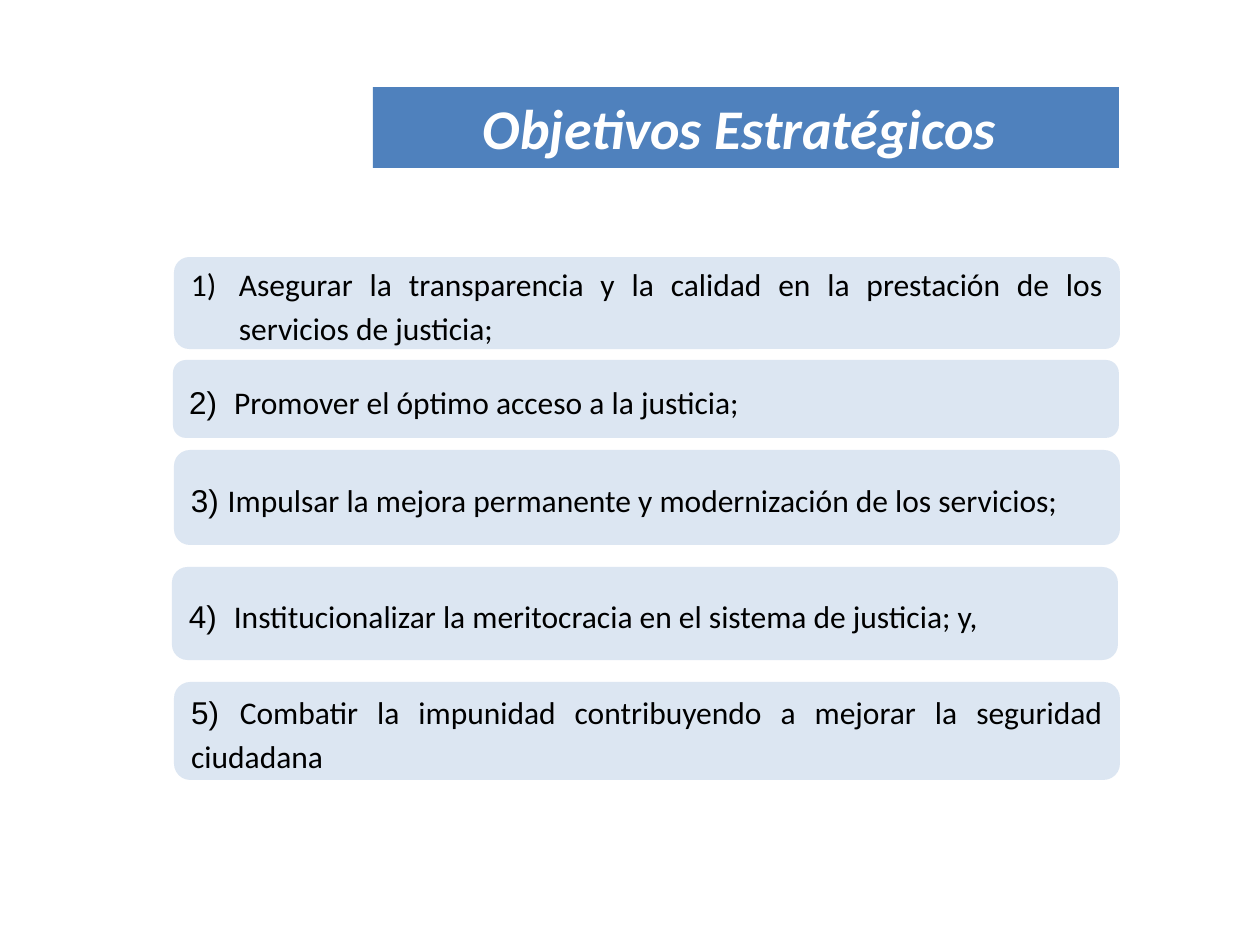
from dataclasses import dataclass

from lxml.etree import SubElement
from pptx import Presentation
from pptx.dml.color import RGBColor
from pptx.enum.shapes import MSO_SHAPE
from pptx.enum.text import MSO_ANCHOR, PP_ALIGN
from pptx.oxml.ns import qn
from pptx.shapes.autoshape import Shape
from pptx.slide import Slide
from pptx.text.text import _Paragraph, _Run
from pptx.util import Emu, Pt

PX_PER_INCH = 126
COLORS = {"banner": "4F81BD", "card": "DCE6F2", "light": "FFFFFF", "dark": "000000"}
CARD_WIDTH = 946
NUMBER_INDENT = 48
TEXT_TAB = 45


@dataclass(frozen=True)
class Objective:
    left: int
    top: int
    height: int
    number: str
    wording: str
    bulleted: bool = False
    tabbed: bool = False


OBJECTIVES = [
    Objective(174, 257, 92, "1)", "Asegurar la transparencia y la calidad en la "
              "prestación de los servicios de justicia;", bulleted=True),
    Objective(173, 360, 78, "2)", "Promover el óptimo acceso a la justicia;", tabbed=True),
    Objective(174, 450, 95, "3)", "Impulsar la mejora permanente y modernización "
              "de los servicios;"),
    Objective(172, 567, 93, "4)", "Institucionalizar la meritocracia en el sistema "
              "de justicia; y,", tabbed=True),
    Objective(174, 682, 98, "5)", "Combatir la impunidad contribuyendo a mejorar "
              "la seguridad ciudadana"),
]


def px(length: int) -> Emu:
    return Emu(round(length * 914400 / PX_PER_INCH))


def add_panel(slide: Slide, preset: MSO_SHAPE, left: int, top: int,
              width: int, height: int, color: str) -> Shape:
    panel = slide.shapes.add_shape(preset, px(left), px(top), px(width), px(height))
    panel.shadow.inherit = False
    panel.fill.solid()
    panel.fill.fore_color.rgb = RGBColor.from_string(COLORS[color])
    panel.line.fill.background()
    panel.text_frame.word_wrap = True
    return panel


def style_run(run: _Run, size: int, color: str, face: str = "Calibri") -> None:
    run.font.name = face
    run.font.size = Pt(size)
    run.font.color.rgb = RGBColor.from_string(COLORS[color])


def add_auto_number(paragraph: _Paragraph) -> None:
    """Number the paragraph as 1) with a hanging indent."""
    properties = paragraph._p.get_or_add_pPr()
    properties.set("marL", str(px(NUMBER_INDENT)))
    properties.set("indent", str(-px(NUMBER_INDENT)))
    SubElement(properties, qn("a:buFont"), typeface="+mj-lt")
    SubElement(properties, qn("a:buAutoNum"), type="arabicParenR")


def add_tab_stop(paragraph: _Paragraph) -> None:
    stops = SubElement(paragraph._p.get_or_add_pPr(), qn("a:tabLst"))
    SubElement(stops, qn("a:tab"), pos=str(px(TEXT_TAB)), algn="l")


def add_banner(slide: Slide, heading: str) -> None:
    banner = add_panel(slide, MSO_SHAPE.RECTANGLE, 373, 87, 746, 81, "banner")
    banner.text_frame.vertical_anchor = MSO_ANCHOR.TOP
    banner.text_frame.text = heading
    paragraph = banner.text_frame.paragraphs[0]
    paragraph.alignment = PP_ALIGN.CENTER
    run = paragraph.runs[0]
    style_run(run, 32, "light")
    run.font.bold = True
    run.font.italic = True


def add_objective(slide: Slide, objective: Objective) -> None:
    card = add_panel(slide, MSO_SHAPE.ROUNDED_RECTANGLE, objective.left, objective.top,
                     CARD_WIDTH, objective.height, "card")
    card.text_frame.vertical_anchor = MSO_ANCHOR.MIDDLE
    paragraph = card.text_frame.paragraphs[0]
    paragraph.alignment = PP_ALIGN.JUSTIFY
    paragraph.line_spacing = 1.15
    paragraph.space_after = Pt(10)
    if objective.bulleted:
        add_auto_number(paragraph)
    else:
        if objective.tabbed:
            add_tab_stop(paragraph)
        number = paragraph.add_run()
        number.text = objective.number + ("\t" if objective.tabbed else " ")
        style_run(number, 18, "dark", "Arial")
    wording = paragraph.add_run()
    wording.text = objective.wording
    style_run(wording, 18, "dark")


def main() -> None:
    presentation = Presentation()
    presentation.slide_width = px(1260)
    presentation.slide_height = px(945)
    slide = presentation.slides.add_slide(presentation.slide_layouts[6])
    add_banner(slide, "Objetivos Estratégicos\u00a0".replace("\u00a0", " "))
    for objective in OBJECTIVES:
        add_objective(slide, objective)
    presentation.save("out.pptx")


if __name__ == "__main__":
    main()
